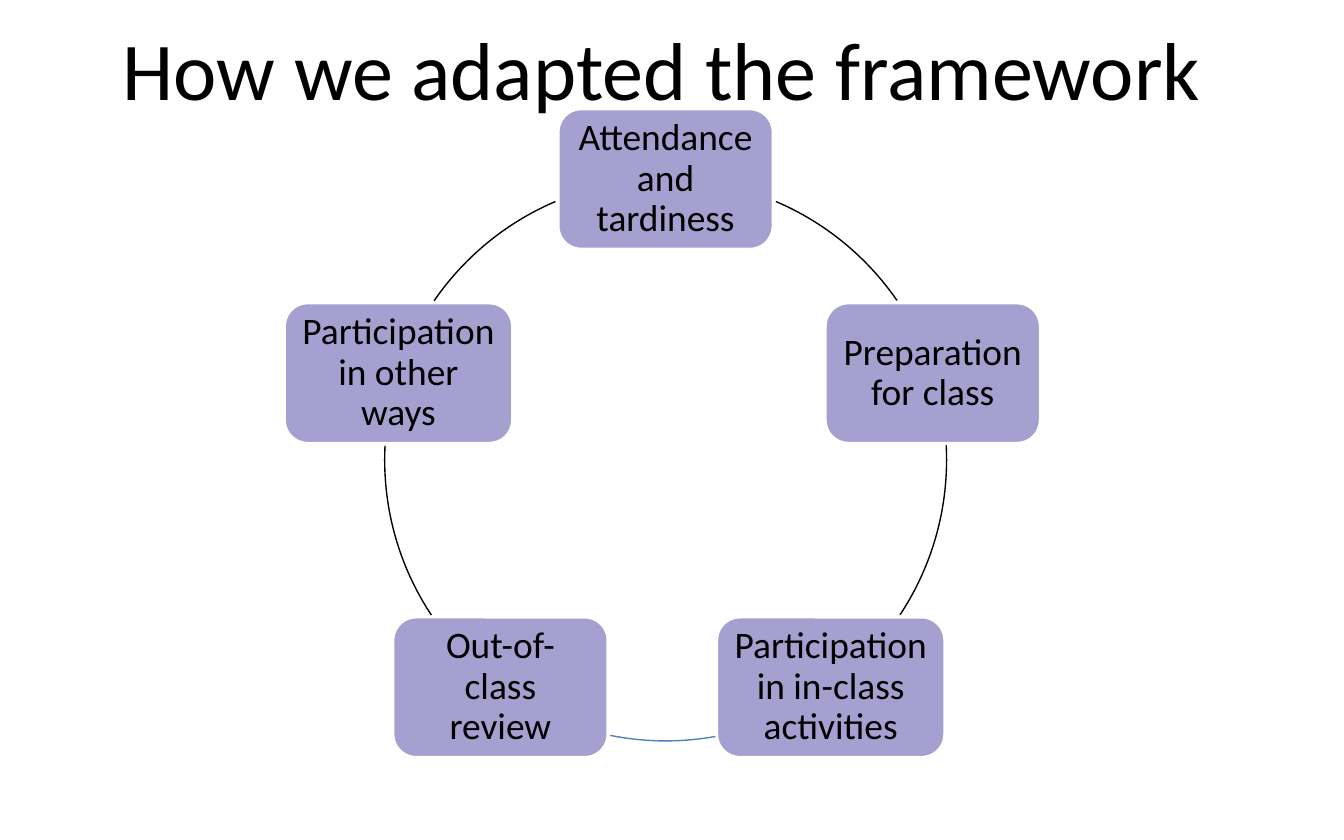
import math

from pptx import Presentation
from pptx.dml.color import RGBColor
from pptx.enum.shapes import MSO_SHAPE
from pptx.enum.text import MSO_ANCHOR, PP_ALIGN
from pptx.util import Pt

ROUNDED = MSO_SHAPE.ROUNDED_RECTANGLE
ARC = MSO_SHAPE.ARC
MIDDLE = MSO_ANCHOR.MIDDLE
CENTER = PP_ALIGN.CENTER

FONT = "Calibri"
BLACK = "000000"
WHITE = "FFFFFF"
LAVENDER = "A5A0CF"
BLUE = "4F81BD"

CENTER_X, CENTER_Y, RADIUS = 356.6, 246.4, 150.5
BOX_HEIGHT = 75.6
NARROW, WIDE = 115.6, 122.6

STEPS = [
    ("Attendance and tardiness", NARROW),
    ("Preparation for class", NARROW),
    ("Participation in in-class activities", WIDE),
    ("Out-of-class review", NARROW),
    ("Participation in other ways", WIDE),
]
ARCS = [
    (293.1, 325.5, BLACK),
    (357, 33.5, BLACK),
    (79.8, 101.4, BLUE),
    (146.5, 183, BLACK),
    (214.5, 246.9, BLACK),
]


def color(value):
    return RGBColor.from_string(value)


def write_text(frame, text, size):
    frame.word_wrap = True
    frame.vertical_anchor = MIDDLE
    frame.text = text
    paragraph = frame.paragraphs[0]
    paragraph.alignment = CENTER
    paragraph.font.name = FONT
    paragraph.font.size = Pt(size)
    paragraph.font.color.rgb = color(BLACK)
    return paragraph


def set_line(shape, value, width):
    shape.shadow.inherit = False
    shape.line.color.rgb = color(value)
    shape.line.width = Pt(width)


def set_title(slide, text):
    title = slide.shapes.title
    title.left, title.top = Pt(15.1), Pt(-1.4)
    title.width, title.height = Pt(679), Pt(74.9)
    write_text(title.text_frame, text, 44)


def add_step(slide, text, width, angle):
    x = CENTER_X + RADIUS * math.cos(angle)
    y = CENTER_Y + RADIUS * math.sin(angle)
    box = slide.shapes.add_shape(
        ROUNDED, Pt(x - width / 2), Pt(y - BOX_HEIGHT / 2), Pt(width), Pt(BOX_HEIGHT)
    )
    box.fill.solid()
    box.fill.fore_color.rgb = color(LAVENDER)
    set_line(box, WHITE, 2)
    frame = box.text_frame
    frame.margin_left = frame.margin_right = Pt(6)
    frame.margin_top = frame.margin_bottom = Pt(6)
    write_text(frame, text, 20).line_spacing = 0.9


def add_arc(slide, start, end, line_color):
    arc = slide.shapes.add_shape(
        ARC, Pt(CENTER_X - RADIUS), Pt(CENTER_Y - RADIUS), Pt(2 * RADIUS), Pt(2 * RADIUS)
    )
    arc.adjustments[0] = start * 0.6
    arc.adjustments[1] = end * 0.6
    arc.fill.background()
    set_line(arc, line_color, 0.75)


def main():
    deck = Presentation()
    deck.slide_width, deck.slide_height = Pt(720), Pt(450)
    slide = deck.slides.add_slide(deck.slide_layouts[5])
    set_title(slide, "How we adapted the framework")
    for index, ((text, width), arc) in enumerate(zip(STEPS, ARCS)):
        add_step(slide, text, width, math.radians(72 * index - 90))
        add_arc(slide, *arc)
    deck.save("out.pptx")


if __name__ == "__main__":
    main()
